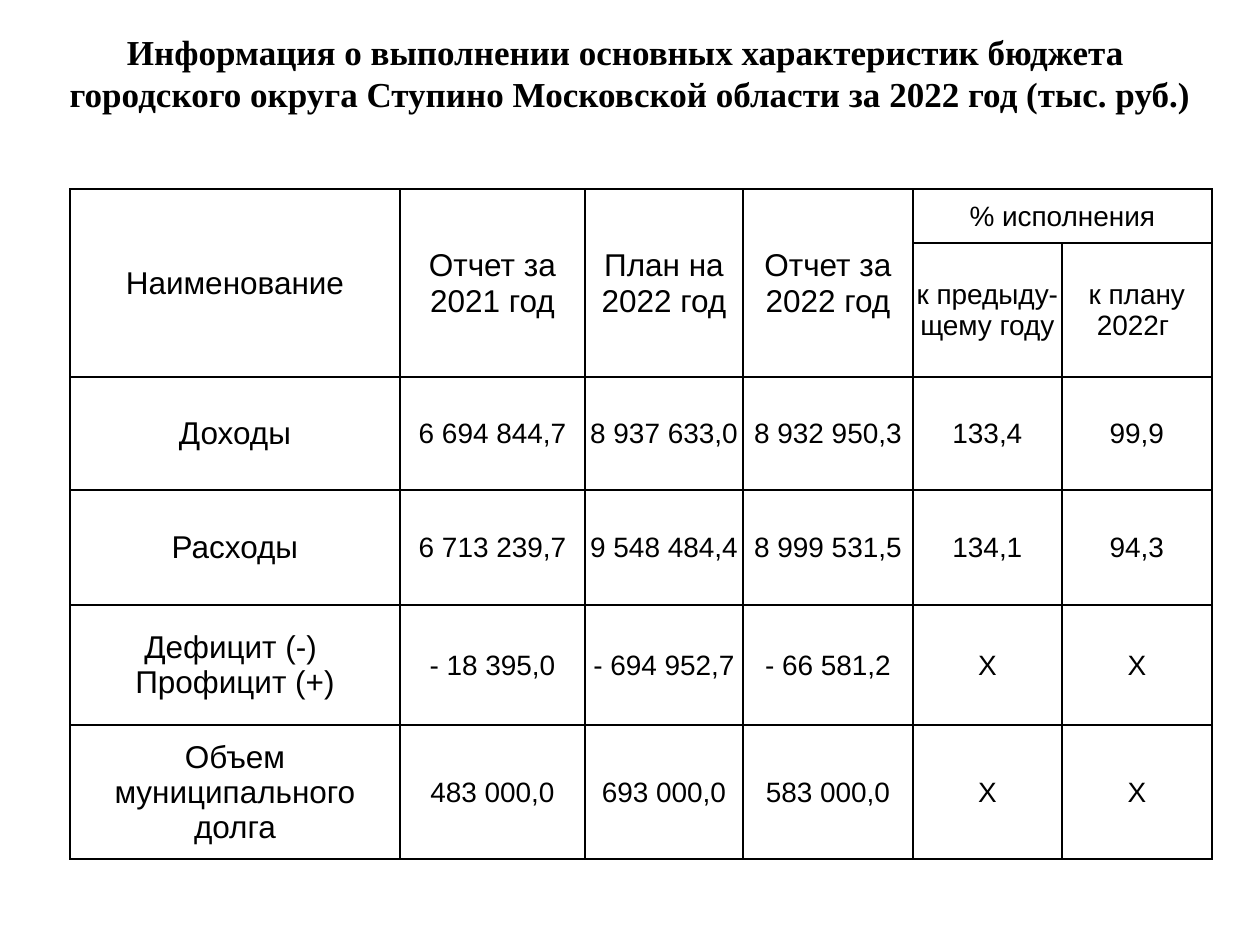
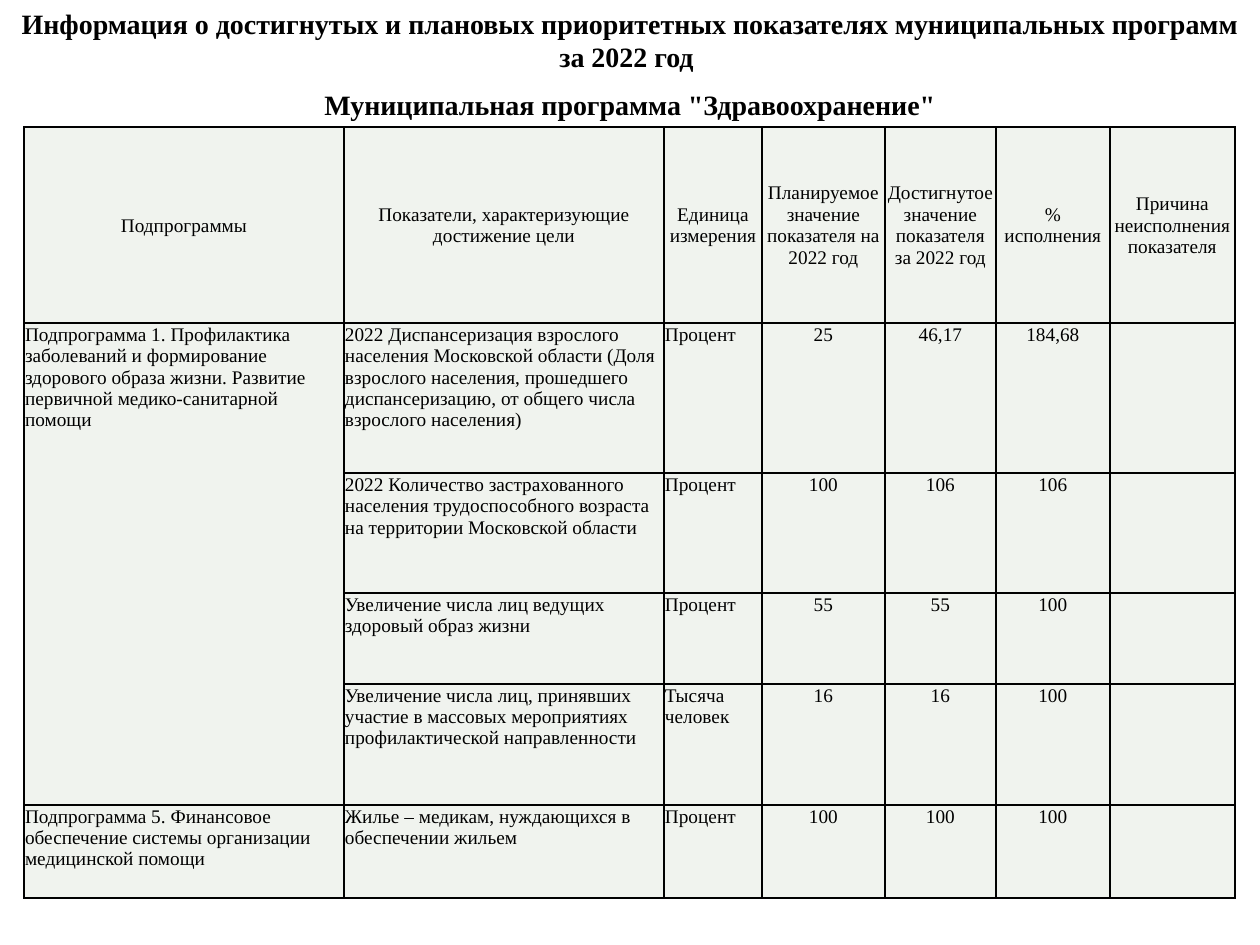
from dataclasses import dataclass
from typing import Callable, NamedTuple, Optional

import pptx
import pptx.dml.color
import pptx.enum.text
import pptx.oxml
import pptx.oxml.ns
import pptx.util

PX_PER_INCH = 126
PAGE_WIDTH, PAGE_HEIGHT = 1260, 945
COLORS = {"ink": "000000", "border": "000000", "cell": "F0F3EE"}
SERIF, SANS = "Times New Roman", "Arial"
ALIGN = pptx.enum.text.PP_ALIGN
ANCHOR = pptx.enum.text.MSO_ANCHOR


class CellStyle(NamedTuple):
    size: int
    align: ALIGN = ALIGN.CENTER
    anchor: ANCHOR = ANCHOR.MIDDLE


class Merge(NamedTuple):
    top: int
    left: int
    bottom: int
    right: int


@dataclass
class Title:
    top: int
    height: int
    size: int
    lines: list[str]


@dataclass
class Grid:
    left: int
    top: int
    columns: list[int]
    rows: list[int]
    texts: list[list[str]]
    merges: list[Merge]
    font: str
    style: Callable[[int, int], CellStyle]
    fill: Optional[str] = None


def px(length: int) -> pptx.util.Emu:
    return pptx.util.Emu(round(length * 914400 / PX_PER_INCH))


def rgb(name: str) -> pptx.dml.color.RGBColor:
    return pptx.dml.color.RGBColor.from_string(COLORS[name])


def write_text(frame, lines: list[str], *, font: str, size: int,
               align: ALIGN = ALIGN.CENTER, bold: bool = False) -> None:
    """Write one paragraph per line; a vertical tab breaks the line inside it."""
    frame.word_wrap = True
    for index, line in enumerate(lines):
        para = frame.paragraphs[0] if index == 0 else frame.add_paragraph()
        para.text = line
        para.alignment = align
        for span in para.runs:
            span.font.name = font
            span.font.size = pptx.util.Pt(size)
            span.font.bold = bold
            span.font.color.rgb = rgb("ink")


def add_title(page, title: Title) -> None:
    box = page.shapes.add_textbox(0, px(title.top), px(PAGE_WIDTH), px(title.height))
    write_text(box.text_frame, title.lines, font=SERIF, size=title.size, bold=True)
    box.text_frame.auto_size = pptx.enum.text.MSO_AUTO_SIZE.SHAPE_TO_FIT_TEXT


def add_borders(cell) -> None:
    properties = cell._tc.get_or_add_tcPr()
    for side in ("lnL", "lnR", "lnT", "lnB"):
        properties.append(pptx.oxml.parse_xml(
            f'<a:{side} {pptx.oxml.ns.nsdecls("a")} w="{pptx.util.Pt(1)}">'
            f'<a:solidFill><a:srgbClr val="{COLORS["border"]}"/></a:solidFill>'
            f'</a:{side}>'))


def format_cell(cell, fill: Optional[str], anchor: ANCHOR) -> None:
    add_borders(cell)
    if fill:
        cell.fill.solid()
        cell.fill.fore_color.rgb = rgb(fill)
    else:
        cell.fill.background()
    cell.margin_left = cell.margin_right = cell.margin_top = px(1)
    cell.margin_bottom = 0
    cell.vertical_anchor = anchor


def add_grid(page, grid: Grid) -> None:
    table = page.shapes.add_table(
        len(grid.rows), len(grid.columns), px(grid.left), px(grid.top),
        px(sum(grid.columns)), px(sum(grid.rows))).table
    table.first_row = table.horz_banding = False
    for column, width in zip(table.columns, grid.columns):
        column.width = px(width)
    for row, height in zip(table.rows, grid.rows):
        row.height = px(height)
    for merge in grid.merges:
        table.cell(merge.top, merge.left).merge(table.cell(merge.bottom, merge.right))
    for row, texts in enumerate(grid.texts):
        for column, text in enumerate(texts):
            cell = table.cell(row, column)
            style = grid.style(row, column)
            format_cell(cell, grid.fill, style.anchor)
            if text:
                write_text(cell.text_frame, [text], font=grid.font,
                           size=style.size, align=style.align)


def budget_style(row: int, column: int) -> CellStyle:
    is_label = column == 0 or (row == 0 and column < 4)
    return CellStyle(18 if is_label else 16)


def programme_style(row: int, column: int) -> CellStyle:
    if row == 0:
        return CellStyle(11)
    return CellStyle(11, ALIGN.LEFT if column < 3 else ALIGN.CENTER, ANCHOR.TOP)


BUDGET_TITLES = [Title(24, 97, 20, [
    "Информация о выполнении основных характеристик бюджета ",
    "городского округа Ступино Московской области за 2022 год (тыс. руб.)",
])]

BUDGET_GRID = Grid(
    left=70, top=189,
    columns=[330, 185, 158, 170, 149, 150],
    rows=[54, 134, 113, 115, 120, 134],
    texts=[
        ["Наименование", "Отчет за 2021 год", "План на 2022 год",
         "Отчет за 2022 год", "% исполнения", ""],
        ["", "", "", "", "к предыду-щему году", "к плану 2022г "],
        ["Доходы", "6 694 844,7", "8 937 633,0", "8 932 950,3", "133,4", "99,9"],
        ["Расходы", "6 713 239,7", "9 548 484,4", "8 999 531,5", "134,1", "94,3"],
        ["Дефицит (-) \vПрофицит (+)", "- 18 395,0", "- 694 952,7",
         "- 66 581,2", "Х", "Х"],
        ["Объем муниципального долга", "483 000,0", "693 000,0", "583 000,0", "Х", "Х"],
    ],
    merges=[*(Merge(0, column, 1, column) for column in range(4)), Merge(0, 4, 0, 5)],
    font=SANS, style=budget_style)

PROGRAMME_TITLES = [
    Title(0, 81, 16, ["Информация о достигнутых и плановых приоритетных показателях "
                      "муниципальных программ за 2022 год "]),
    Title(81, 47, 16, ['Муниципальная программа "Здравоохранение"']),
]

PROGRAMME_GRID = Grid(
    left=24, top=127,
    columns=[320, 320, 98, 123, 111, 114, 125],
    rows=[196, 150, 120, 91, 121, 93],
    texts=[
        ["Подпрограммы", "Показатели, характеризующие достижение цели",
         "Единица измерения", "Планируемое значение показателя на 2022 год",
         "Достигнутое значение показателя за 2022 год", "% исполнения",
         "Причина неисполнения показателя"],
        ["Подпрограмма 1. Профилактика заболеваний и формирование здорового образа "
         "жизни. Развитие первичной медико-санитарной помощи",
         "2022 Диспансеризация взрослого населения Московской области (Доля взрослого "
         "населения, прошедшего диспансеризацию, от общего числа взрослого населения)",
         "Процент", "25", "46,17", "184,68", ""],
        ["", "2022 Количество застрахованного населения трудоспособного возраста "
         "на территории Московской области", "Процент", "100", "106", "106", ""],
        ["", "Увеличение числа лиц ведущих здоровый образ жизни",
         "Процент", "55", "55", "100", ""],
        ["", "Увеличение числа лиц, принявших участие в массовых мероприятиях "
         "профилактической направленности", "Тысяча человек", "16", "16", "100", ""],
        ["Подпрограмма 5. Финансовое обеспечение системы организации медицинской помощи",
         "Жилье – медикам, нуждающихся в обеспечении жильем",
         "Процент", "100", "100", "100", ""],
    ],
    merges=[Merge(1, 0, 4, 0)],
    font=SERIF, style=programme_style, fill="cell")


def main() -> None:
    deck = pptx.Presentation()
    deck.slide_width, deck.slide_height = px(PAGE_WIDTH), px(PAGE_HEIGHT)
    for titles, grid in ((BUDGET_TITLES, BUDGET_GRID),
                         (PROGRAMME_TITLES, PROGRAMME_GRID)):
        page = deck.slides.add_slide(deck.slide_layouts[6])
        for title in titles:
            add_title(page, title)
        add_grid(page, grid)
    deck.save("out.pptx")


if __name__ == "__main__":
    main()
